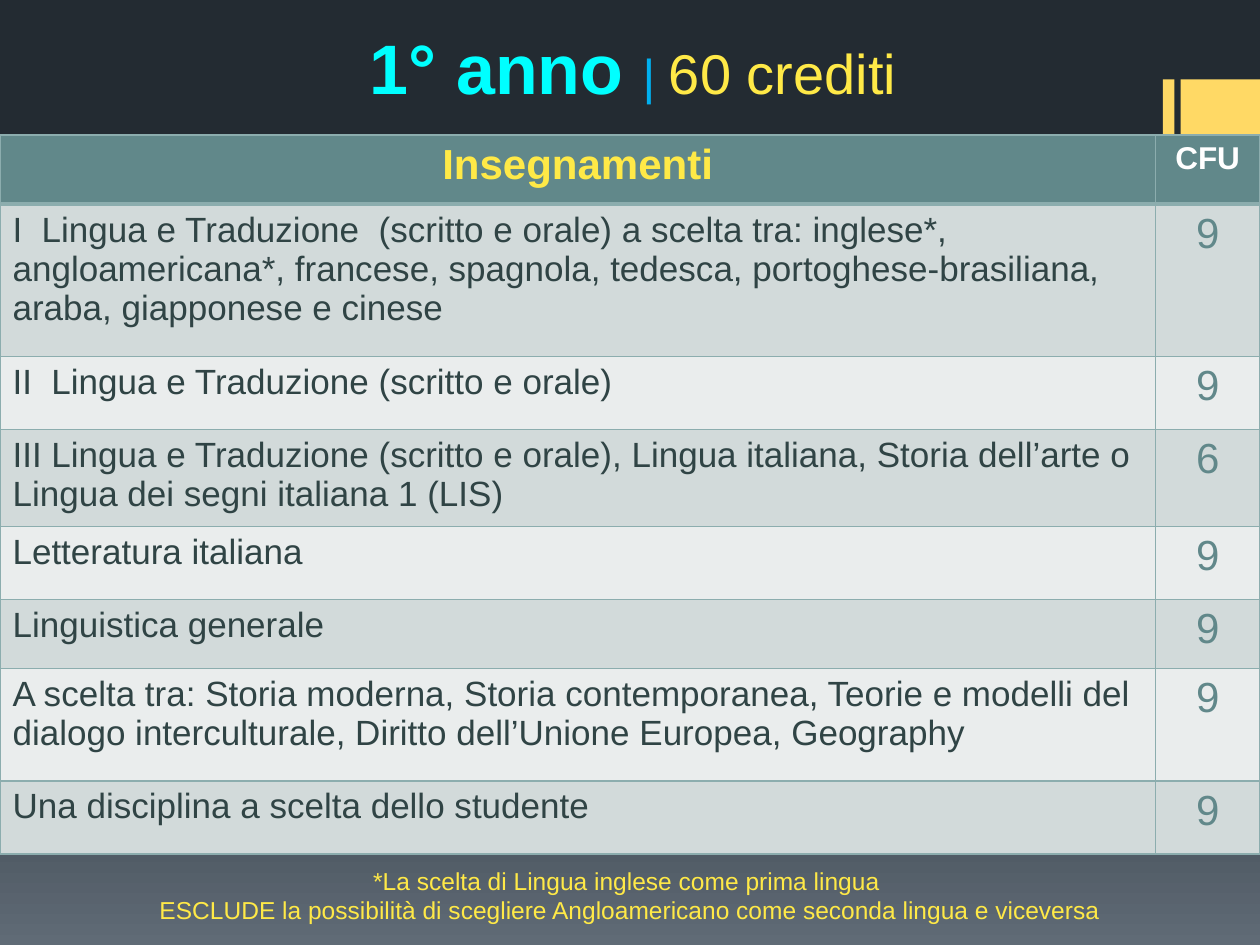
"""Build the first-year course slide."""
from copy import deepcopy
from dataclasses import dataclass
from lxml.etree import SubElement as Sub
from pptx import Presentation
from pptx.dml.color import RGBColor as Rgb
from pptx.enum.shapes import MSO_SHAPE as Kind
from pptx.enum.text import MSO_ANCHOR as Anchor, PP_ALIGN as Align
from pptx.oxml.ns import qn
from pptx.util import Inches, Pt


@dataclass(frozen=True)
class Theme:
    font: str = "Arial"
    back: tuple = ((0, "232B32"), (0.65, "273037"), (1, "606B76"))
    gold: str = "FFD965"
    lemon: str = "FFE947"
    cyan: str = "00FFFF"
    blue: str = "00B0F0"
    white: str = "FFFFFF"
    teal: str = "61888A"
    edge: str = "8CADAE"
    ink: str = "304445"
    bands: tuple = ("D2DADA", "EAEDED")
    title: int = 40
    total: int = 32
    bar: int = 28
    head: int = 24
    body: int = 20
    unit: int = 18
    note: int = 14


T = Theme()
HEADS = (("Insegnamenti", T.head, T.lemon), ("CFU", T.unit, T.white))
ROWS = (
    ("I  Lingua e Traduzione  (scritto e orale) a scelta tra: inglese*, "
     "angloamericana*, francese, spagnola, tedesca, portoghese-brasiliana, "
     "araba, giapponese e cinese", 9, 1.21),
    ("II  Lingua e Traduzione (scritto e orale)", 9, 0.58),
    ("III Lingua e Traduzione (scritto e orale), Lingua italiana, "
     "Storia dell’arte o Lingua dei segni italiana 1 (LIS)", 6, 0.71),
    ("Letteratura italiana", 9, 0.58),
    ("Linguistica generale", 9, 0.55),
    ("A scelta tra: Storia moderna, Storia contemporanea, Teorie e modelli "
     "del dialogo interculturale, Diritto dell’Unione Europea, Geography",
     9, 0.89),
    ("Una disciplina a scelta dello studente", 9, 0.58),
)
NOTES = (
    "*La scelta di Lingua inglese come prima lingua ",
    "ESCLUDE la possibilità di scegliere Angloamericano come seconda lingua "
    "e viceversa",
)


def add_run(para, text, size, color, bold=False):
    run = para.add_run()
    run.text = text
    font = run.font
    font.name, font.size, font.bold = T.font, Pt(size), bold
    font.color.rgb = Rgb.from_string(color)


def add_back(slide):
    fill = slide.background.fill
    fill.gradient()
    fill.gradient_angle = 270
    stops = slide.element.xpath(".//p:bg//a:gsLst")[0]
    stops.insert(1, deepcopy(stops[0]))
    for stop, (pos, color) in zip(fill.gradient_stops, T.back):
        stop.position = pos
        stop.color.rgb = Rgb.from_string(color)


def add_bar(slide, left, width):
    bar = slide.shapes.add_shape(
        Kind.RECTANGLE, Inches(left), Inches(0.63), Inches(width), Inches(0.63))
    bar.shadow.inherit = False
    bar.fill.solid()
    bar.fill.fore_color.rgb = Rgb.from_string(T.gold)
    bar.line.fill.background()


def add_text(slide, box, lines, anchor=Anchor.TOP, inset=0.05):
    frame = slide.shapes.add_textbox(*map(Inches, box)).text_frame
    frame.word_wrap = True
    frame.vertical_anchor = anchor
    frame.margin_top = Inches(inset)
    for num, runs in enumerate(lines):
        para = frame.add_paragraph() if num else frame.paragraphs[0]
        para.alignment = Align.CENTER
        for run in runs:
            add_run(para, *run)


def add_edges(cell, top, base):
    props = cell._tc.get_or_add_tcPr()
    for side, width in (("L", 1), ("R", 1), ("T", top), ("B", base)):
        line = Sub(props, qn(f"a:ln{side}"), w=str(Pt(width)))
        Sub(Sub(line, qn("a:solidFill")), qn("a:srgbClr"), val=T.edge)


def set_cell(cell, run, fill, center, top=1, base=1):
    add_edges(cell, top, base)
    cell.fill.solid()
    cell.fill.fore_color.rgb = Rgb.from_string(fill)
    para = cell.text_frame.paragraphs[0]
    para.alignment = Align.CENTER if center else Align.LEFT
    add_run(para, *run)


def add_grid(slide):
    tall = (0.55, *(row[2] for row in ROWS))
    grid = slide.shapes.add_table(
        len(tall), 2, 0, Inches(1.07), Inches(10), Inches(sum(tall))).table
    grid.horz_banding = False
    for col, width in zip(grid.columns, (9.17, 0.83)):
        col.width = Inches(width)
    for row, high in zip(grid.rows, tall):
        row.height = Inches(high)
    for col, run in enumerate(HEADS):
        set_cell(grid.cell(0, col), (*run, True), T.teal, True, base=3)
    for num, (name, cfu, _) in enumerate(ROWS, 1):
        fill, top = T.bands[(num - 1) % 2], 3 if num == 1 else 1
        set_cell(grid.cell(num, 0), (name, T.body, T.ink), fill, False, top)
        set_cell(grid.cell(num, 1), (str(cfu), T.head, T.teal), fill, True, top)


def main():
    deck = Presentation()
    deck.slide_width, deck.slide_height = Inches(10), Inches(7.5)
    slide = deck.slides.add_slide(deck.slide_layouts[6])
    add_back(slide)
    add_bar(slide, 9.23, 0.09)
    add_bar(slide, 9.37, 0.63)
    title = (("1° anno ", T.title, T.cyan, True), ("| ", T.bar, T.blue),
             ("60 crediti", T.total, T.lemon))
    add_text(slide, (0.55, -0.19, 8.95, 1.1), [title], Anchor.BOTTOM)
    add_grid(slide)
    notes = [[(text, T.note, T.lemon)] for text in NOTES]
    add_text(slide, (0, 6.56, 10, 0.84), notes, inset=0.31)
    deck.save("out.pptx")


if __name__ == "__main__":
    main()
